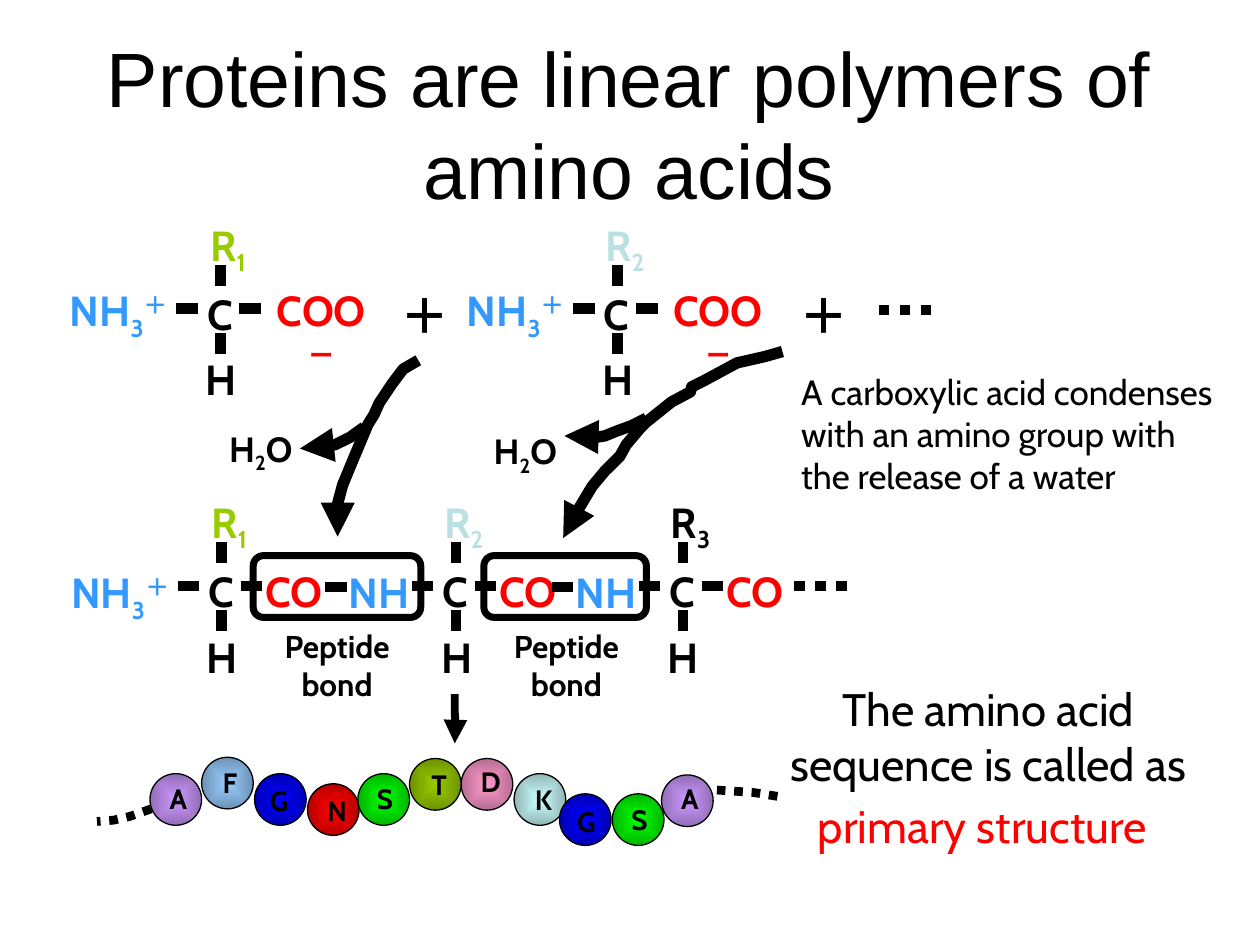
from dataclasses import dataclass

from lxml.etree import SubElement
from pptx import Presentation
from pptx.dml.color import RGBColor
from pptx.enum.dml import MSO_LINE
from pptx.enum.shapes import MSO_CONNECTOR, MSO_SHAPE
from pptx.enum.text import MSO_ANCHOR, MSO_AUTO_SIZE, PP_ALIGN
from pptx.oxml.ns import qn
from pptx.util import Inches, Pt


@dataclass(frozen=True)
class Theme:
    ink: str = "000000"
    amino: str = "3399FF"
    acid: str = "FF0000"
    side_1: str = "99CC00"
    side_2: str = "BBE0E3"
    title_font: str = "Arial"
    body_font: str = "Cabin"
    title: int = 44
    plus: int = 28
    summary: int = 26
    summary_end: int = 30
    atom: int = 24
    note: int = 20
    caption: int = 18
    bead: int = 16
    bond: float = 6
    bead_shade: float = 0.714


THEME = Theme()


@dataclass(frozen=True)
class Piece:
    text: str
    color: str = THEME.ink
    baseline: int = 0
    size: int = 0


@dataclass(frozen=True)
class Residue:
    center: float
    backbone: float
    side_color: str
    number: str
    amino: str
    acid: str


@dataclass(frozen=True)
class Bead:
    letter: str
    color: str
    left: float
    top: float
    letter_left: float
    letter_top: float


@dataclass(frozen=True)
class Stroke:
    points: tuple
    width: float
    arrow: bool = True
    dotted: bool = False


RESIDUES = (
    Residue(1.75, 2.45, THEME.side_1, "1", "NH3", "COO"),
    Residue(4.9, 2.45, THEME.side_2, "2", "NH3", "COO"),
    Residue(1.76, 4.65, THEME.side_1, "1", "NH3", "CO"),
    Residue(3.62, 4.65, THEME.side_2, "2", "NH", "CO"),
    Residue(5.42, 4.65, THEME.ink, "3", "NH", "CO"),
)

BEADS = (
    Bead("A", "CC99FF", 1.19, 6.14, 1.08, 6.15),
    Bead("F", "99CCFF", 1.6, 6.01, 1.49, 6.03),
    Bead("G", "0000FF", 2.02, 6.14, 1.88, 6.17),
    Bead("N", "FF0000", 2.44, 6.22, 2.34, 6.25),
    Bead("K", "CCFFFF", 4.08, 6.14, 3.98, 6.16),
    Bead("D", "FF99CC", 3.66, 6.02, 3.56, 6.02),
    Bead("S", "00FF00", 2.84, 6.14, 2.72, 6.15),
    Bead("T", "99CC00", 3.25, 6.02, 3.15, 6.04),
    Bead("G", "0000FF", 4.44, 6.3, 4.32, 6.34),
    Bead("S", "00FF00", 4.86, 6.3, 4.74, 6.32),
    Bead("A", "CC99FF", 5.25, 6.15, 5.14, 6.15),
)

STROKES = (
    Stroke(((6.21, 2.79), (6.07, 2.83), (5.85, 2.88), (5.59, 3.02), (5.49, 3.07),
            (5.48, 3.11), (5.33, 3.19), (5.13, 3.35), (5.08, 3.4), (4.97, 3.53),
            (4.92, 3.62), (4.8, 3.74), (4.7, 3.86), (4.58, 4.06), (4.53, 4.14),
            (4.47, 4.27)), 6.5),
    Stroke(((5.13, 3.32), (5.01, 3.38), (4.9, 3.42), (4.8, 3.46), (4.68, 3.48),
            (4.58, 3.47), (4.48, 3.46)), 6.5),
    Stroke(((3.32, 2.86), (3.2, 2.93), (3.11, 3.05), (3.01, 3.2), (2.97, 3.29),
            (2.92, 3.37), (2.79, 3.68), (2.72, 3.85), (2.65, 4.11), (2.67, 4.19),
            (2.68, 4.26)), 6.5),
    Stroke(((2.89, 3.39), (2.78, 3.47), (2.66, 3.53), (2.53, 3.55), (2.38, 3.56)), 6.5),
    Stroke(((1.2, 6.42), (1.03, 6.48), (0.9, 6.51), (0.77, 6.52)), 5, False, True),
    Stroke(((6.17, 6.32), (5.98, 6.29), (5.84, 6.28), (5.69, 6.27)), 5, False, True),
    Stroke(((3.61, 5.51), (3.61, 5.66), (3.62, 5.8), (3.64, 5.87), (3.61, 5.9)), 4.5),
)


def add_pieces(frame, pieces: tuple, size: int, font: str, bold: bool, align) -> None:
    """Write the pieces as runs of the frame's first paragraph."""
    paragraph = frame.paragraphs[0]
    paragraph.alignment = align
    for piece in pieces:
        run = paragraph.add_run()
        run.text = piece.text
        run.font.name = font
        run.font.size = Pt(piece.size or size)
        run.font.bold = bold
        run.font.color.rgb = RGBColor.from_string(piece.color)
        if piece.baseline:
            run.font._element.set("baseline", str(piece.baseline * 1000))


def add_label(slide, pieces: tuple, left: float, top: float, width: float, height: float,
              size: int = THEME.atom, bold: bool = True, align=PP_ALIGN.CENTER) -> None:
    """Place a wrapped text box."""
    label = slide.shapes.add_textbox(Inches(left), Inches(top), Inches(width), Inches(height))
    label.text_frame.word_wrap = True
    label.text_frame.auto_size = MSO_AUTO_SIZE.SHAPE_TO_FIT_TEXT
    add_pieces(label.text_frame, pieces, size, THEME.body_font, bold, align)


def style_line(line, width: float, dotted: bool = False) -> None:
    """Give a line its ink, width and dash."""
    line.color.rgb = RGBColor.from_string(THEME.ink)
    line.width = Pt(width)
    if dotted:
        line.dash_style = MSO_LINE.ROUND_DOT


def add_bond(slide, x1: float, y1: float, x2: float, y2: float, dotted: bool = False) -> None:
    """Draw a straight bond without a shadow."""
    bond = slide.shapes.add_connector(
        MSO_CONNECTOR.STRAIGHT, Inches(x1), Inches(y1), Inches(x2), Inches(y2))
    style_line(bond.line, THEME.bond, dotted)
    SubElement(bond._element.spPr, qn("a:effectLst"))


def add_residue(slide, residue: Residue) -> None:
    """Draw one amino acid around its central carbon."""
    x, y = residue.center, residue.backbone
    free = residue.acid == "COO"
    shift = -0.24 if free else -0.2
    add_label(slide, (Piece("R", residue.side_color),
                      Piece(residue.number, residue.side_color, -25)),
              x - 0.27, y - 0.76, 0.66, 0.5)
    if residue.amino == "NH3":
        add_label(slide, (Piece("NH", THEME.amino), Piece("3", THEME.amino, -25),
                          Piece("＋", THEME.amino, 30)), x - 1.37, y + shift, 1.13, 0.5)
    else:
        add_label(slide, (Piece("NH", THEME.amino),), x - 1.04, y + shift, 0.86, 0.5)
        add_bond(slide, x - 1.04, y + 0.01, x - 0.87, y + 0.01)
    add_label(slide, (Piece("C"),), x - 0.34, y - 0.21, 0.67, 0.5)
    if free:
        add_label(slide, (Piece("COO", THEME.acid), Piece("ー", THEME.acid, 30)),
                  x + 0.29, y + shift, 1.02, 0.5)
    else:
        add_label(slide, (Piece("CO", THEME.acid),), x + 0.13, y - 0.21, 0.88, 0.5)
    add_label(slide, (Piece("H"),), x - 0.33, y + 0.31, 0.67, 0.5)
    for start, end in ((-0.35, -0.18), (0.19, 0.36)):
        add_bond(slide, x, y + start, x, y + end)
    for start, end in ((-0.35, -0.18), (0.15, 0.32)):
        add_bond(slide, x + start, y, x + end, y)


def add_stroke(slide, stroke: Stroke) -> None:
    """Draw an open curved stroke, with an arrowhead where asked."""
    first, *rest = [(Inches(x), Inches(y)) for x, y in stroke.points]
    builder = slide.shapes.build_freeform(*first)
    builder.add_line_segments(rest, close=False)
    curve = builder.convert_to_shape()
    curve.shadow.inherit = False
    curve.fill.background()
    style_line(curve.line, stroke.width, stroke.dotted)
    if stroke.arrow:
        SubElement(curve._element.spPr.find(qn("a:ln")), qn("a:tailEnd"), type="triangle")


def add_peptide_frame(slide, left: float, width: float) -> None:
    """Outline a peptide bond."""
    outline = slide.shapes.add_shape(
        MSO_SHAPE.ROUNDED_RECTANGLE, Inches(left), Inches(4.41), Inches(width), Inches(0.49))
    outline.shadow.inherit = False
    outline.fill.background()
    style_line(outline.line, 4)


def add_bead(slide, bead: Bead) -> None:
    """Draw a bead shaded from its centre outwards."""
    ball = slide.shapes.add_shape(
        MSO_SHAPE.OVAL, Inches(bead.left), Inches(bead.top), Inches(0.41), Inches(0.41))
    ball.shadow.inherit = False
    style_line(ball.line, 0.75)
    ball.fill.gradient()
    light = RGBColor.from_string(bead.color)
    dark = RGBColor(*(round(channel * THEME.bead_shade) for channel in light))
    for stop, color in zip(ball.fill.gradient_stops, (light, dark)):
        stop.color.rgb = color
    gradient = ball._element.spPr.find(qn("a:gradFill"))
    gradient.remove(gradient.find(qn("a:lin")))
    radial = SubElement(gradient, qn("a:path"), path="shape")
    SubElement(radial, qn("a:fillToRect"), l="50000", t="50000", r="50000", b="50000")


def main() -> None:
    """Build and save the slide."""
    deck = Presentation()
    deck.slide_width, deck.slide_height = Inches(10), Inches(7.5)
    slide = deck.slides.add_slide(deck.slide_layouts[5])
    title = slide.shapes.title
    title.left, title.top = Inches(0.53), Inches(0.19)
    title.width, title.height = Inches(8.93), Inches(1.57)
    title.text_frame.vertical_anchor = MSO_ANCHOR.MIDDLE
    add_pieces(title.text_frame, (Piece("Proteins are linear polymers of amino acids"),),
               THEME.title, THEME.title_font, False, PP_ALIGN.CENTER)
    for residue in RESIDUES:
        add_residue(slide, residue)
    for left, y in ((6.9, 2.46), (6.23, 4.65)):
        add_bond(slide, left + 0.49, y, left, y, dotted=True)
    for left in (3.08, 6.25):
        add_label(slide, (Piece("＋"),), left, 2.22, 0.55, 0.57, THEME.plus)
    for left, top in ((3.75, 3.36), (1.65, 3.34)):
        add_label(slide, (Piece("H"), Piece("2", baseline=-25), Piece("O")),
                  left, top, 0.84, 0.43, THEME.note)
    for left in (1.87, 3.69):
        add_label(slide, (Piece("Peptide bond"),), left, 4.93, 1.61, 0.7, THEME.caption)
    for left, width in ((2.01, 1.33), (3.84, 1.29)):
        add_peptide_frame(slide, left, width)
    add_label(slide, (Piece("The amino acid sequence is called as "),
                      Piece("primary structure", THEME.acid),
                      Piece(" ", size=THEME.summary_end)),
              5.88, 5.36, 3.93, 1.47, THEME.summary, False)
    for bead in BEADS:
        add_bead(slide, bead)
    for bead in BEADS:
        add_label(slide, (Piece(bead.letter),), bead.letter_left, bead.letter_top,
                  0.67, 0.37, THEME.bead)
    for stroke in STROKES:
        add_stroke(slide, stroke)
    add_label(slide, (Piece("A carboxylic acid condenses with an amino group "
                            "with the release of a water"),),
              6.26, 2.89, 3.52, 1.43, THEME.note, False, PP_ALIGN.LEFT)
    deck.save("out.pptx")


if __name__ == "__main__":
    main()
